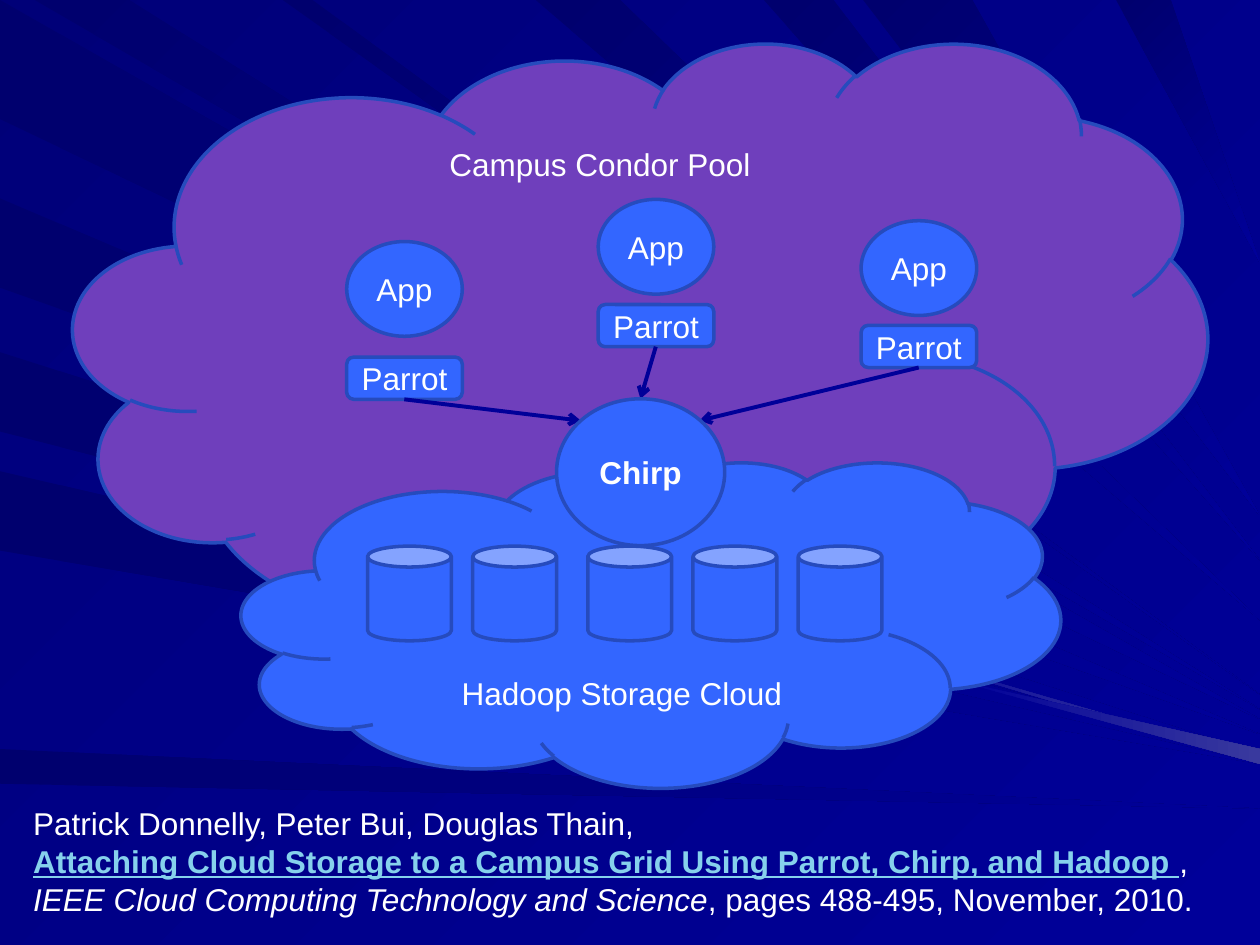
import pptx
import pptx.dml.color
import pptx.enum.shapes
import pptx.enum.text
import pptx.oxml
import pptx.oxml.ns
import pptx.util
from pptx.dml.color import RGBColor
from pptx.enum.shapes import MSO_SHAPE
from pptx.util import Cm

NAVY = RGBColor(0x00, 0x00, 0x99)
NIGHT = RGBColor(0x00, 0x00, 0x78)
SHADE = RGBColor(0x00, 0x00, 0x6E)
DUSK = RGBColor(0x39, 0x39, 0x9E)
PURPLE = RGBColor(0x6F, 0x3F, 0xBC)
BLUE = RGBColor(0x33, 0x66, 0xFF)
EDGE = RGBColor(0x26, 0x4B, 0xBD)
LINK = RGBColor(0x86, 0xD1, 0xEC)
WHITE = RGBColor(0xFF, 0xFF, 0xFF)

WIDTH, HEIGHT = 25.4, 19.05

# Rays narrow from a stretch of the left or top edge to a point on the right edge
LEFT_RAYS = [(0, 2.4, 14.5), (4, 5.8, 14.8), (7.1, 8.7, 15.2), (9.5, 11.1, 15.4),
             (15.1, 15.8, 16.3)]
TOP_RAYS = [(0.7, 2.6, 14.3), (5.7, 6.3, 14), (10.8, 12.5, 12.5), (15.4, 16.8, 11.3),
            (17.4, 19.6, 10.4), (22.5, 23.6, 5.3)]

prs = pptx.Presentation()
prs.slide_width, prs.slide_height = Cm(WIDTH), Cm(HEIGHT)
s = prs.slides.add_slide(prs.slide_layouts[6])


def set_gradient(fill, first, last, angle):
    """Fill with two stops; the angle runs clockwise in degrees."""
    fill.gradient()
    fill.gradient_angle = -angle % 360
    for stop, color in zip(fill.gradient_stops, (first, last)):
        stop.color.rgb = color


def add_node(kind, left, top, width, height, text="", fill=BLUE, bold=False):
    sp = s.shapes.add_shape(kind, Cm(left), Cm(top), Cm(width), Cm(height))
    sp.shadow.inherit = False
    sp.fill.solid()
    sp.fill.fore_color.rgb = fill
    sp.line.color.rgb = EDGE
    sp.line.width = pptx.util.Pt(2)
    if text:
        tf = sp.text_frame
        tf.text = text
        tf.vertical_anchor = pptx.enum.text.MSO_ANCHOR.MIDDLE
        p = tf.paragraphs[0]
        p.alignment = pptx.enum.text.PP_ALIGN.CENTER
        p.font.name = "Arial"
        p.font.size = pptx.util.Pt(18)
        p.font.bold = bold
        p.font.color.rgb = WHITE
    return sp


# Background
set_gradient(s.background.fill, NIGHT, NAVY, 45)
rays = [(SHADE, NAVY, 0, [(0, a), (0, b), (WIDTH, end)]) for a, b, end in LEFT_RAYS]
rays += [(SHADE, NAVY, 45, [(a, 0), (b, 0), (WIDTH, end)]) for a, b, end in TOP_RAYS]
rays.append((NAVY, DUSK, 0, [(16.1, 12.6), (WIDTH, 15.3), (WIDTH, 15.4)]))
rays.append((NAVY, DUSK, 0, [(19.2, 13.7), (WIDTH, 15.1), (WIDTH, 15.4)]))
for first, last, angle, corners in rays:
    points = [(Cm(x), Cm(y)) for x, y in corners]
    builder = s.shapes.build_freeform(*points[0])
    builder.add_line_segments(points[1:], close=True)
    ray = builder.convert_to_shape()
    ray.shadow.inherit = False
    ray.line.fill.background()
    set_gradient(ray.fill, first, last, angle)

# Clouds
pool = add_node(MSO_SHAPE.CLOUD, 1.48, 0.85, 22.86, 12.28, "Campus Condor Pool", PURPLE)
pool.text_frame.vertical_anchor = pptx.enum.text.MSO_ANCHOR.TOP
pool.text_frame.margin_top = Cm(0.23)
storage = add_node(MSO_SHAPE.CLOUD, 4.87, 9.31, 16.51, 6.56, "Hadoop Storage Cloud")
storage.text_frame.vertical_anchor = pptx.enum.text.MSO_ANCHOR.BOTTOM
storage.text_frame.margin_bottom = Cm(0.23)

for left in (7.41, 9.53, 11.85, 13.97, 16.09):
    add_node(MSO_SHAPE.CAN, left, 11.01, 1.69, 1.91)

# Citation
tb = s.shapes.add_textbox(Cm(0.42), Cm(16.09), Cm(24.1), Cm(2.56))
tb.text_frame.word_wrap = False
p = tb.text_frame.paragraphs[0]
p.font.name = "Arial"
p.font.size = pptx.util.Pt(18)
p.font.color.rgb = WHITE
p.add_run().text = "Patrick Donnelly, Peter Bui, Douglas Thain,"
p.add_line_break()
r = p.add_run()
r.text = "Attaching Cloud Storage to a Campus Grid Using Parrot, Chirp, and Hadoop "
r.font.bold = r.font.underline = True
r.font.color.rgb = LINK
p.add_run().text = ","
p.add_line_break()
r = p.add_run()
r.text = "IEEE Cloud Computing Technology and Science"
r.font.italic = True
p.add_run().text = ", pages 488-495, November, 2010."

# Applications: left, top of App, top of Parrot, arrow end at Chirp
for left, app_top, parrot_top, end_x, end_y in (
    (6.99, 4.87, 7.2, 11.71, 8.48),
    (12.06, 4.02, 6.14, 12.91, 8.04),
    (17.36, 4.45, 6.56, 14.1, 8.48),
):
    add_node(MSO_SHAPE.OVAL, left, app_top, 2.33, 1.91, "App")
    add_node(MSO_SHAPE.ROUNDED_RECTANGLE, left, parrot_top, 2.33, 0.85, "Parrot")
    arrow = s.shapes.add_connector(
        pptx.enum.shapes.MSO_CONNECTOR.STRAIGHT,
        Cm(left + 1.16), Cm(parrot_top + 0.85), Cm(end_x), Cm(end_y))
    arrow.line.color.rgb = NAVY
    arrow.line.width = pptx.util.Pt(2.25)
    spPr = arrow.element.spPr
    head = pptx.oxml.ns.qn("a:tailEnd")
    spPr.find(pptx.oxml.ns.qn("a:ln")).append(spPr.makeelement(head, {"type": "arrow"}))
    spPr.append(spPr.makeelement(pptx.oxml.ns.qn("a:effectLst"), {}))

add_node(MSO_SHAPE.OVAL, 11.22, 8.04, 3.39, 2.96, "Chirp", bold=True)

prs.save("out.pptx")
